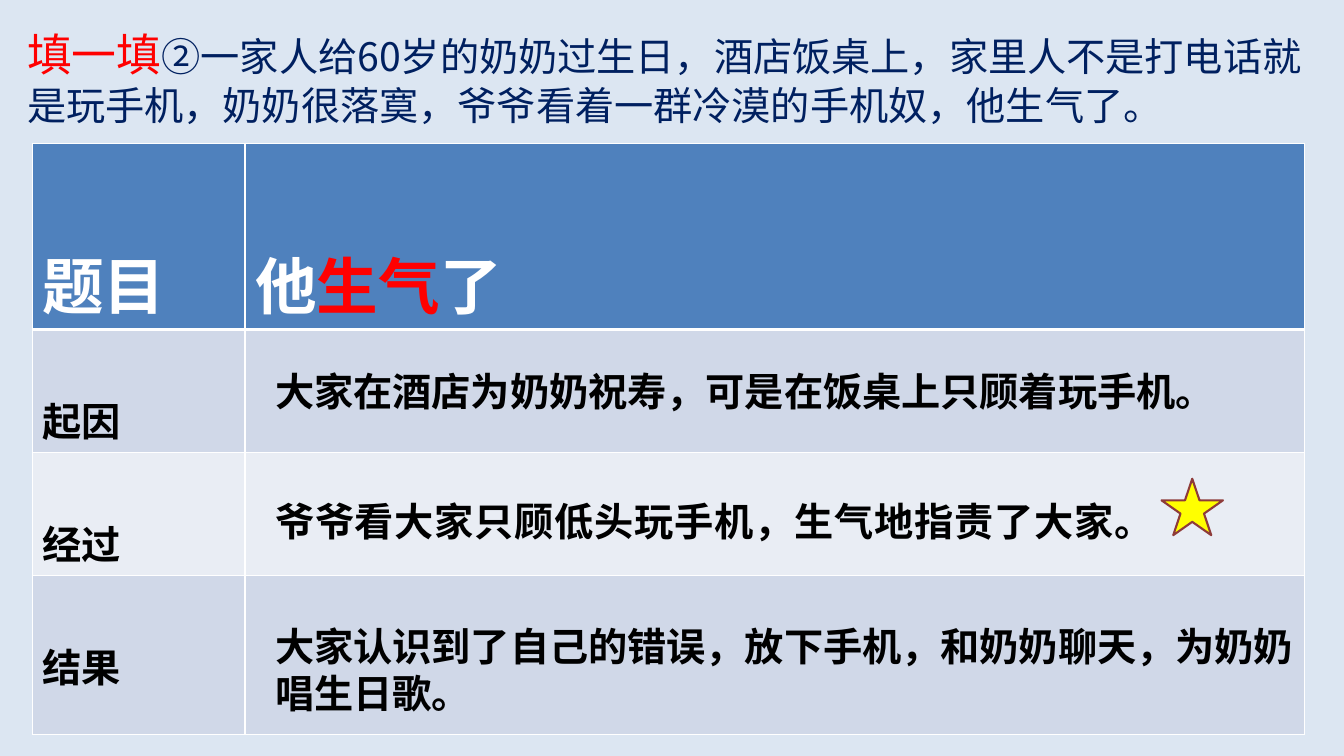
from dataclasses import dataclass

from lxml import etree
from pptx import Presentation
from pptx import util as u
from pptx.dml.color import RGBColor
from pptx.enum import shapes, text
from pptx.oxml import ns

PX = 9144  # one px is a hundredth of an inch


@dataclass(frozen=True)
class Theme:
    font: str = "Noto Sans CJK SC"
    background: str = "DCE6F2"
    navy: str = "002060"
    red: str = "FF0000"
    white: str = "FFFFFF"
    black: str = "000000"
    header: str = "4F81BD"
    bands: tuple = ("D0D8E8", "E9EDF4")
    star: str = "FFFF00"
    star_line: str = "8E3B39"
    body: int = 28
    lead: int = 32
    title: int = 44


class StorySlide:
    def __init__(self, presentation, theme):
        self.theme = theme
        self.slide = presentation.slides.add_slide(presentation.slide_layouts[6])
        self.paint(self.slide.background.fill, theme.background)

    def paint(self, fill, color):
        fill.solid()
        fill.fore_color.rgb = RGBColor.from_string(color)

    def set_words(self, paragraph, parts, bold=True, spacing=None):
        """Each part is (wording, size, color)."""
        paragraph.text = parts[0][0]
        for wording, _, _ in parts[1:]:
            paragraph.add_run().text = wording
        if spacing:
            paragraph.line_spacing = spacing
        for run, (_, size, color) in zip(paragraph.runs, parts):
            run.font.size = u.Pt(size)
            run.font.bold = bold
            run.font.name = self.theme.font
            run.font.color.rgb = RGBColor.from_string(color)
            properties = run._r.get_or_add_rPr()
            etree.SubElement(properties, ns.qn("a:ea"), typeface=self.theme.font)

    def text_box(self, box, parts, bold=True, spacing=None, align=None):
        shape = self.slide.shapes.add_textbox(*(v * PX for v in box))
        frame = shape.text_frame
        frame.word_wrap = True
        frame.auto_size = text.MSO_AUTO_SIZE.SHAPE_TO_FIT_TEXT
        paragraph = frame.paragraphs[0]
        self.set_words(paragraph, parts, bold, spacing)
        paragraph.alignment = align

    def border(self, cell, side, points):
        properties = cell._tc.get_or_add_tcPr()
        line = etree.SubElement(properties, ns.qn(f"a:ln{side}"), w=str(u.Pt(points)))
        fill = etree.SubElement(line, ns.qn("a:solidFill"))
        etree.SubElement(fill, ns.qn("a:srgbClr"), val=self.theme.white)

    def table(self, left, top, widths, heights, rows):
        frame = self.slide.shapes.add_table(
            len(heights), len(widths), left * PX, top * PX,
            sum(widths) * PX, sum(heights) * PX)
        table = frame.table
        table.first_row = table.horz_banding = False
        for column, width in zip(table.columns, widths):
            column.width = width * PX
        for index, (height, contents) in enumerate(zip(heights, rows)):
            table.rows[index].height = height * PX
            color = self.theme.bands[(index - 1) % 2] if index else self.theme.header
            for cell, parts in zip(table.rows[index].cells, contents):
                if parts:
                    self.set_words(cell.text_frame.paragraphs[0], parts, spacing=2.0)
                # The rule below the header is heavier than the others
                for side in "LRTB":
                    heavy = (index, side) in ((0, "B"), (1, "T"))
                    self.border(cell, side, 3 if heavy else 1)
                self.paint(cell.fill, color)

    def star(self, box):
        shape = self.slide.shapes.add_shape(
            shapes.MSO_SHAPE.STAR_5_POINT, *(v * PX for v in box))
        shape.shadow.inherit = False
        self.paint(shape.fill, self.theme.star)
        shape.line.color.rgb = RGBColor.from_string(self.theme.star_line)
        shape.line.width = u.Pt(1.5)


def main():
    theme = Theme()
    presentation = Presentation()
    presentation.slide_width = 1333 * PX
    presentation.slide_height = 750 * PX
    story = StorySlide(presentation, theme)

    # Exercise prompt
    story.text_box((17, 22, 1284, 145), [
        ("填一填", theme.lead, theme.red),
        ("②一家人给60岁的奶奶过生日，酒店饭桌上，家里人不是打电话就是玩手机，"
         "奶奶很落寞，爷爷看着一群冷漠的手机奴，他生气了。", theme.body, theme.navy),
    ], bold=False)

    # Outline table
    header = [
        [("题目", theme.title, theme.white)],
        [("他", theme.title, theme.white), ("生气", theme.title, theme.red),
         ("了", theme.title, theme.white)],
    ]
    stages = [[[(stage, theme.body, theme.black)], None]
              for stage in ("起因", "经过", "结果")]
    story.table(32, 142, (211, 1051), (185, 122, 122, 158), [header] + stages)

    # Answers over the table, with a star at the key stage
    answers = [
        ((263, 359, 945, 88), "大家在酒店为奶奶祝寿，可是在饭桌上只顾着玩手机。", None, None),
        ((263, 465, 853, 70), "爷爷看大家只顾低头玩手机，生气地指责了大家。", 1.5,
         text.PP_ALIGN.JUSTIFY),
        ((263, 612, 1049, 104),
         "大家认识到了自己的错误，放下手机，和奶奶聊天，为奶奶唱生日歌。", None, None),
    ]
    for box, wording, spacing, align in answers:
        story.text_box(box, [(wording, theme.body, theme.black)],
                       spacing=spacing, align=align)
    story.star((1152, 475, 61, 56))

    presentation.save("out.pptx")


if __name__ == "__main__":
    main()
